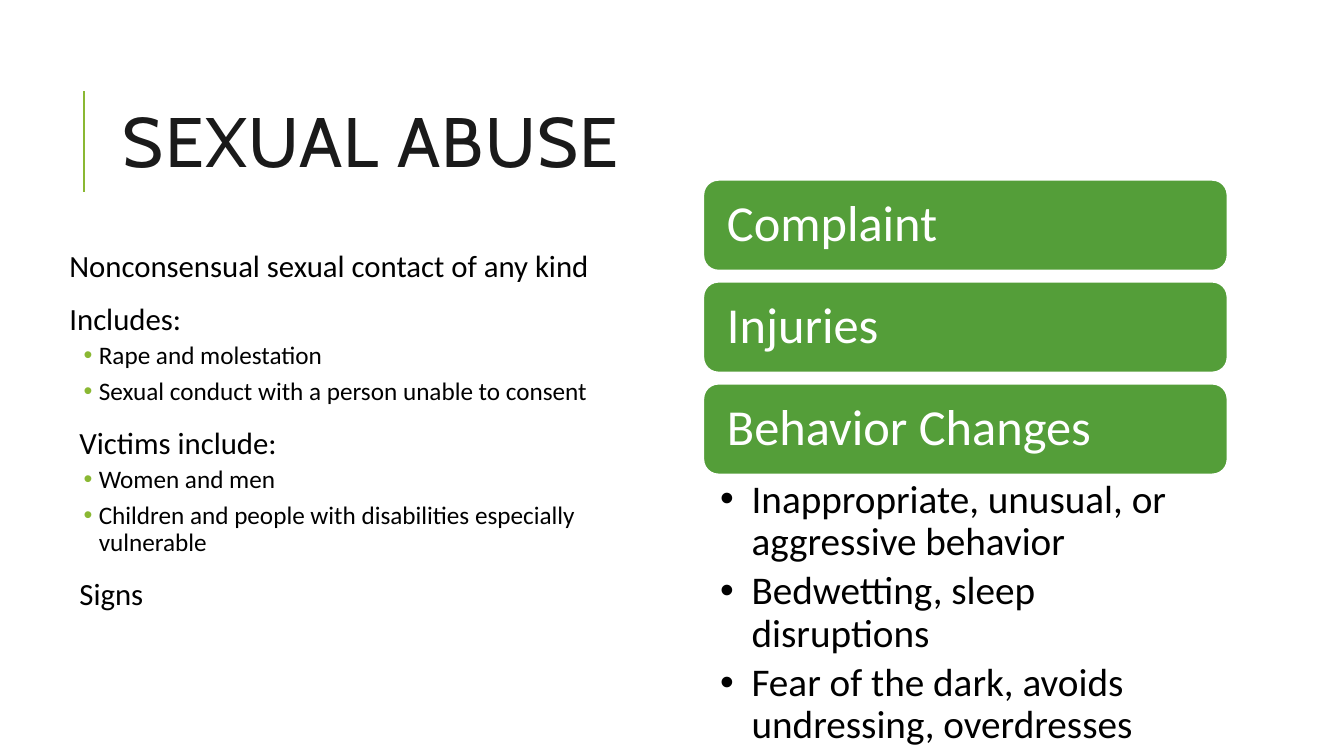
from lxml import etree
from pptx import Presentation
from pptx.dml.color import RGBColor
from pptx.enum.shapes import MSO_CONNECTOR, MSO_SHAPE
from pptx.enum.text import MSO_ANCHOR, MSO_AUTO_SIZE, PP_ALIGN
from pptx.oxml.ns import qn
from pptx.util import Pt

LEFT = PP_ALIGN.LEFT
MIDDLE = MSO_ANCHOR.MIDDLE
NO_AUTOFIT = MSO_AUTO_SIZE.NONE
ROUNDED = MSO_SHAPE.ROUNDED_RECTANGLE
STRAIGHT = MSO_CONNECTOR.STRAIGHT
TITLE_ONLY = 5

BLACK, WHITE, INK = "000000", "FFFFFF", "1A1A1A"
LIME, GREEN = "8AB833", "549E39"

# Paragraph styles: size, indent, hanging, space before, space after, bullet colour
PLAIN = (22, 0, 0, 12, 2, None)
INDENTED = (22, 7.2, 0, 12, 2, None)
POINT = (18, 21, 10.8, 2, 4, LIME)
SIGN_POINT = (28, 22.5, 22.5, 0, 5, BLACK)

DEFINITION = [
    ("Nonconsensual sexual contact of any kind", PLAIN),
    ("Includes:", PLAIN),
    ("Rape and molestation", POINT),
    ("Sexual conduct with a person unable to consent", POINT),
    ("Victims include:", INDENTED),
    ("Women and men", POINT),
    ("Children and people with disabilities especially vulnerable", POINT),
    ("Signs", INDENTED),
]
SIGNS = ["Complaint", "Injuries", "Behavior Changes"]
BEHAVIORS = [
    ("Inappropriate, unusual, or aggressive behavior", SIGN_POINT),
    ("Bedwetting, sleep disruptions", SIGN_POINT),
    ("Fear of the dark, avoids undressing, overdresses", SIGN_POINT),
]

SIGN_LEFT, SIGN_TOP, SIGN_WIDTH, SIGN_HEIGHT, SIGN_PITCH = 502.4, 128.5, 374.4, 64.8, 72.8


def rgb(color):
    return RGBColor.from_string(color)


def place(shape, left, top, width, height):
    shape.left, shape.top = Pt(left), Pt(top)
    shape.width, shape.height = Pt(width), Pt(height)


def set_margins(frame, left, top, right, bottom):
    frame.margin_left, frame.margin_top = Pt(left), Pt(top)
    frame.margin_right, frame.margin_bottom = Pt(right), Pt(bottom)


def format_paragraph(paragraph, size, color, font="Calibri", line_spacing=0.9):
    paragraph.alignment = LEFT
    paragraph.line_spacing = line_spacing
    for run in paragraph.runs:
        run.font.size = Pt(size)
        run.font.name = font
        run.font.color.rgb = rgb(color)


def indent(paragraph, left, hanging, bullet_color):
    properties = paragraph._p.get_or_add_pPr()
    properties.set("marL", str(Pt(left)))
    properties.set("indent", str(-Pt(hanging)))
    if bullet_color:
        color = etree.SubElement(properties, qn("a:buClr"))
        etree.SubElement(color, qn("a:srgbClr"), val=bullet_color)
        etree.SubElement(properties, qn("a:buFont"), typeface="Arial")
        etree.SubElement(properties, qn("a:buChar"), char="•")


def format_title(slide, text):
    title = slide.shapes.title
    place(title, 80.6, 46.1, 765.4, 118)
    frame = title.text_frame
    frame.text = text
    frame.vertical_anchor = MIDDLE
    frame.auto_size = NO_AUTOFIT
    paragraph = frame.paragraphs[0]
    format_paragraph(paragraph, 50, INK, "Cabin", 0.8)
    paragraph.runs[0].font._element.set("spc", "100")


def add_accent_line(slide, x, top, bottom):
    line = slide.shapes.add_connector(STRAIGHT, Pt(x), Pt(bottom), Pt(x), Pt(top))
    line.line.color.rgb = rgb(LIME)
    line.line.width = Pt(1.5)
    etree.SubElement(line._element.spPr, qn("a:effectLst"))


def add_text_list(slide, box, margins, items):
    frame = slide.shapes.add_textbox(*map(Pt, box)).text_frame
    frame.word_wrap = True
    set_margins(frame, *margins)
    for index, (text, style) in enumerate(items):
        size, left, hanging, before, after, bullet_color = style
        paragraph = frame.add_paragraph() if index else frame.paragraphs[0]
        paragraph.text = text
        format_paragraph(paragraph, size, BLACK)
        paragraph.space_before, paragraph.space_after = Pt(before), Pt(after)
        indent(paragraph, left, hanging, bullet_color)


def add_sign(slide, text, top):
    box = (SIGN_LEFT, top, SIGN_WIDTH, SIGN_HEIGHT)
    shape = slide.shapes.add_shape(ROUNDED, *map(Pt, box))
    shape.shadow.inherit = False
    shape.fill.solid()
    shape.fill.fore_color.rgb = rgb(GREEN)
    shape.line.color.rgb = rgb(WHITE)
    shape.line.width = Pt(1.25)
    frame = shape.text_frame
    frame.text = text
    frame.vertical_anchor = MIDDLE
    set_margins(frame, 13.7, 10, 13.7, 10)
    format_paragraph(frame.paragraphs[0], 36, WHITE)


def main():
    presentation = Presentation()
    presentation.slide_width, presentation.slide_height = Pt(960), Pt(540)
    slide = presentation.slides.add_slide(presentation.slide_layouts[TITLE_ONLY])

    add_accent_line(slide, 60, 65, 137)
    format_title(slide, "SEXUAL ABUSE")
    add_text_list(slide, (46, 175.7, 427, 350.6), (3.6, 3.6, 3.6, 3.6), DEFINITION)
    for row, sign in enumerate(SIGNS):
        add_sign(slide, sign, SIGN_TOP + row * SIGN_PITCH)
    behaviors_top = SIGN_TOP + (len(SIGNS) - 1) * SIGN_PITCH + SIGN_HEIGHT
    add_text_list(slide, (SIGN_LEFT, behaviors_top, SIGN_WIDTH, 185),
                  (12, 3.6, 20, 3.6), BEHAVIORS)

    presentation.save("out.pptx")


if __name__ == "__main__":
    main()
